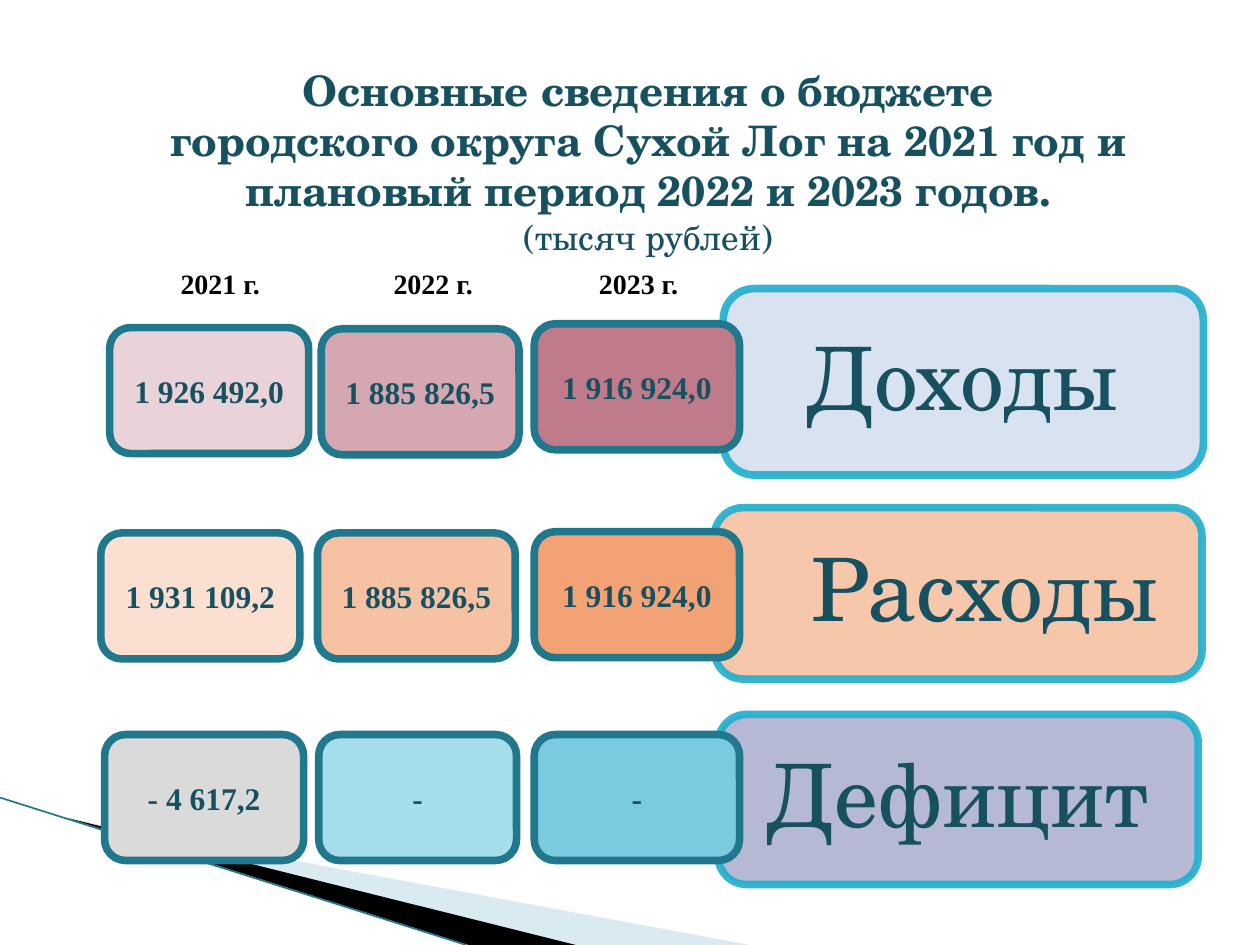
from lxml import etree
from pptx import Presentation
from pptx.dml.color import RGBColor
from pptx.enum.shapes import MSO_CONNECTOR, MSO_SHAPE
from pptx.enum.text import MSO_ANCHOR, PP_ALIGN
from pptx.oxml.ns import qn
from pptx.util import Inches, Pt

ROUNDED = MSO_SHAPE.ROUNDED_RECTANGLE
RECTANGLE = MSO_SHAPE.RECTANGLE
STRAIGHT = MSO_CONNECTOR.STRAIGHT
MIDDLE = MSO_ANCHOR.MIDDLE
CENTER = PP_ALIGN.CENTER
LEFT = PP_ALIGN.LEFT

SERIF = "Times New Roman"
SCHOOL = "TeX Gyre Schola"
BORDER = 4.33
COLORS = {
    "text": "175160", "black": "000000", "white": "FFFFFF",
    "swoosh": "A0CBDC", "swoosh_line": "97C5D8",
    "label_border": "1FAECD", "value_border": "21788D",
}
YEAR_TABS = {"2021 г.": 0.75, "2022 г.": 2.44, "2023 г.": 4.07}
VALUE_WIDTHS = (1.58, 1.57, 1.63)
ROWS = [
    {"label": "Доходы", "box": (5.74, 2.29, 3.81, 1.48), "fill": "D4DFEF", "indent": 0.21,
     "values": [("1 926 492,0", 0.87, 2.6, "EAD3D8"),
                ("1 885 826,5", 2.55, 2.61, "D5A7B1"),
                ("1 916 924,0", 4.24, 2.57, "C07B8A")]},
    {"label": "Расходы", "box": (5.67, 4.03, 3.87, 1.36), "fill": "F7C1A4", "indent": 0.63,
     "values": [("1 931 109,2", 0.8, 4.23, "FBE0D1"),
                ("1 885 826,5", 2.52, 4.23, "F7C1A4"),
                ("1 916 924,0", 4.24, 4.22, "F3A276")]},
    {"label": "Дефицит", "box": (5.7, 5.67, 3.81, 1.35), "fill": "AFB2D0", "indent": 0.21,
     "values": [("- 4 617,2", 0.83, 5.83, "DADADA"),
                ("-", 2.53, 5.83, "A6DDEA"),
                ("-", 4.24, 5.83, "7ACBE0")]},
]


class BudgetSlide:
    def __init__(self, presentation):
        self.slide = presentation.slides.add_slide(presentation.slide_layouts[6])
        self.shapes = self.slide.shapes

    def color(self, name):
        return RGBColor.from_string(COLORS.get(name, name))

    def set_alpha(self, fill, percent):
        color = fill._xPr.find(qn("a:solidFill"))[0]
        etree.SubElement(color, qn("a:alpha"), val=str(percent * 1000))

    def paint(self, shape, fill, border=None, alpha=100):
        shape.shadow.inherit = False
        shape.fill.solid()
        shape.fill.fore_color.rgb = self.color(fill)
        if border:
            shape.line.width = Pt(BORDER)
            shape.line.color.rgb = self.color(border)
        else:
            shape.line.fill.background()
        if alpha < 100:
            self.set_alpha(shape.fill, alpha)
            if border:
                self.set_alpha(shape.line.fill, alpha)

    def add_run(self, paragraph, text, size, font=SERIF, color="text", bold=False):
        run = paragraph.add_run()
        run.text = text
        run.font.size = Pt(size)
        run.font.name = font
        run.font.bold = bold
        run.font.color.rgb = self.color(color)

    def box(self, kind, place, fill, border, alpha=100):
        shape = self.shapes.add_shape(kind, *map(Inches, place))
        self.paint(shape, fill, border, alpha)
        shape.text_frame.word_wrap = True
        shape.text_frame.vertical_anchor = MIDDLE
        return shape

    def swoosh(self, points, fill, alpha=100):
        corners = [(Inches(x), Inches(y)) for x, y in points]
        builder = self.shapes.build_freeform(*corners[0])
        builder.add_line_segments(corners[1:])
        self.paint(builder.convert_to_shape(), fill, alpha=alpha)

    def line(self, start, end, color, width):
        connector = self.shapes.add_connector(STRAIGHT, *map(Inches, start + end))
        connector.line.color.rgb = self.color(color)
        connector.line.width = Pt(width)
        etree.SubElement(connector._element.spPr, qn("a:effectLst"))

    def year_header(self, place):
        shape = self.box(RECTANGLE, place, "white", "white")
        paragraph = shape.text_frame.paragraphs[0]
        paragraph.alignment = LEFT
        tabs = etree.SubElement(paragraph._p.get_or_add_pPr(), qn("a:tabLst"))
        for year, position in YEAR_TABS.items():
            etree.SubElement(tabs, qn("a:tab"), pos=str(Inches(position)), algn="ctr")
            self.add_run(paragraph, "\t" + year, 16, color="black", bold=True)

    def title(self, place, lines):
        frame = self.shapes.add_textbox(*map(Inches, place)).text_frame
        frame.word_wrap = True
        frame.vertical_anchor = MIDDLE
        for index, (text, size, bold) in enumerate(lines):
            paragraph = frame.add_paragraph() if index else frame.paragraphs[0]
            paragraph.alignment = CENTER
            self.add_run(paragraph, text, size, SCHOOL, bold=bold)

    def label(self, text, place, fill, indent):
        shape = self.box(ROUNDED, place, fill, "label_border", 90)
        frame = shape.text_frame
        frame.margin_left, frame.margin_right = Inches(indent), Inches(0.21)
        frame.margin_top = frame.margin_bottom = Inches(0.1)
        paragraph = frame.paragraphs[0]
        paragraph.alignment = CENTER
        paragraph.line_spacing = 0.9
        self.add_run(paragraph, text, 50, SCHOOL)

    def value(self, text, place, fill):
        shape = self.box(ROUNDED, place, fill, "value_border")
        paragraph = shape.text_frame.paragraphs[0]
        paragraph.alignment = CENTER
        self.add_run(paragraph, text, 18, bold=True)


def main():
    presentation = Presentation()
    presentation.slide_width = Inches(10)
    presentation.slide_height = Inches(7.5)
    budget = BudgetSlide(presentation)

    budget.swoosh([(0.55, 6.5), (5.95, 7.5), (4.56, 7.5)], "swoosh", 40)
    budget.swoosh([(0.53, 6.49), (4.57, 7.5), (3.72, 7.5)], "black")
    budget.line((0, 6.33), (3.7, 7.5), "value_border", 0.95)
    budget.year_header((0.9, 2.1, 4.67, 0.29))
    budget.title((0.84, 0.45, 8.61, 1.65), [
        ("Основные сведения о бюджете", 24, True),
        ("городского округа Сухой Лог на 2021 год и плановый период 2022 и 2023 годов.", 24, True),
        ("(тысяч рублей)", 20, False),
    ])
    for row in ROWS:
        budget.label(row["label"], row["box"], row["fill"], row["indent"])
    for row in ROWS:
        for (text, left, top, fill), width in zip(row["values"], VALUE_WIDTHS):
            budget.value(text, (left, top, width, 1), fill)

    presentation.save("out.pptx")


if __name__ == "__main__":
    main()
